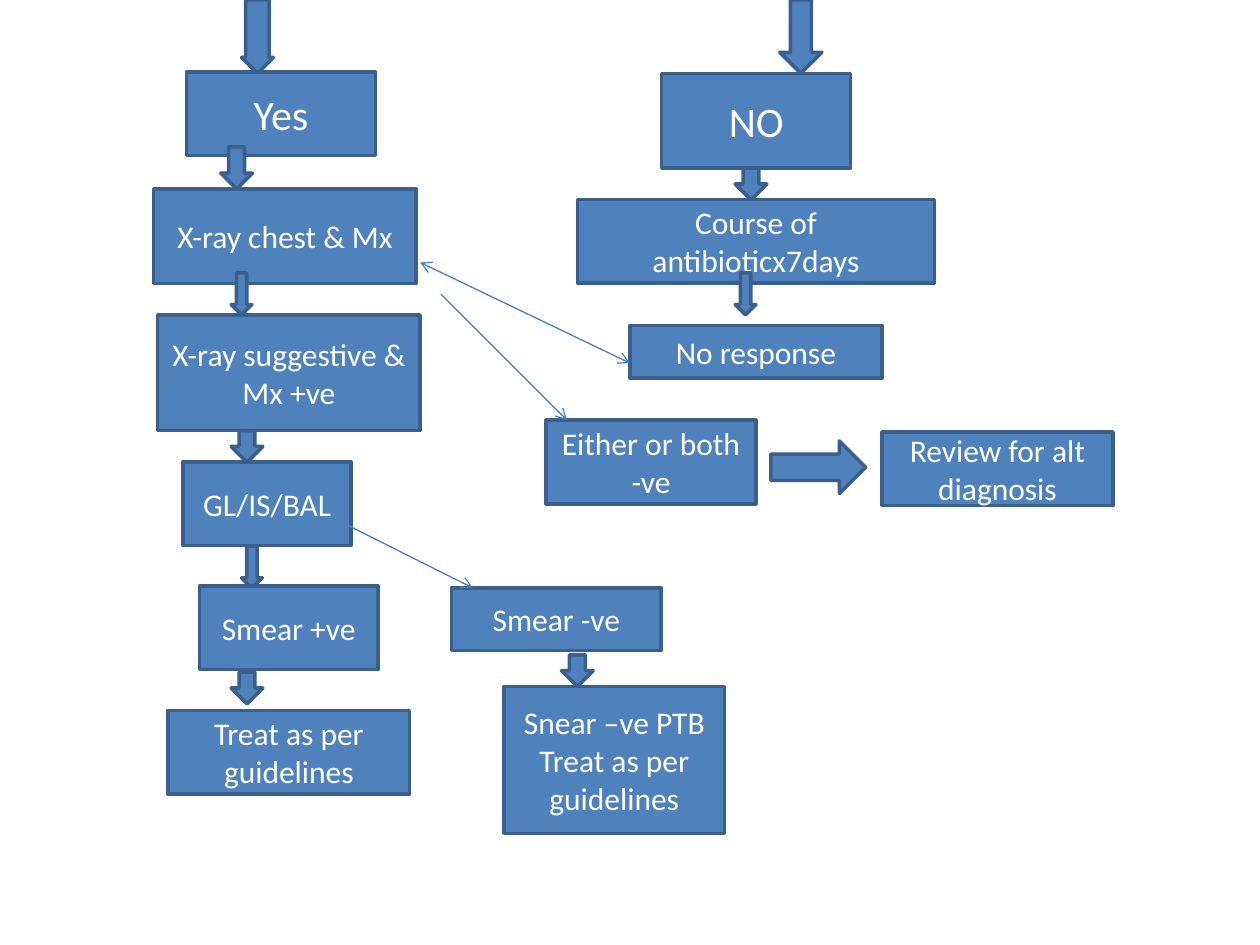
"""Build the chest X-ray and smear decision flowchart slide."""
from lxml.etree import SubElement
from pptx import Presentation
from pptx.dml.color import RGBColor
from pptx.enum.shapes import MSO_CONNECTOR as Link, MSO_SHAPE as Shape
from pptx.enum.text import MSO_ANCHOR as Anchor, PP_ALIGN as Align
from pptx.oxml.ns import qn
from pptx.util import Cm, Pt

BLUE = RGBColor(0x4F, 0x81, 0xBD)
EDGE = RGBColor(0x3A, 0x5F, 0x8C)
WIRE = RGBColor(0x4B, 0x7E, 0xBC)
WHITE = RGBColor(0xFF, 0xFF, 0xFF)

BOX, DOWN, RIGHT = Shape.RECTANGLE, Shape.DOWN_ARROW, Shape.RIGHT_ARROW

STEPS = [
    (DOWN, 15.72, 0, 0.85, 1.48, "", 0.5),
    (DOWN, 4.87, 0, 0.64, 1.48, "", 0.74),
    (BOX, 13.34, 1.48, 3.81, 1.91, "NO", 24),
    (BOX, 3.76, 1.45, 3.81, 1.69, "Yes", 24),
    (DOWN, 14.82, 3.39, 0.64, 0.64, "", 0.5),
    (DOWN, 4.45, 2.96, 0.64, 0.85, "", 0.5),
    (BOX, 11.64, 4.02, 7.2, 1.69, "Course of antibioticx7days", 18),
    (BOX, 3.1, 3.81, 5.29, 1.91, "X-ray chest & Mx", 18),
    (DOWN, 14.82, 5.5, 0.42, 0.85, "", 0.5),
    (DOWN, 4.66, 5.5, 0.42, 0.85, "", 0.5),
    (BOX, 12.7, 6.56, 5.08, 1.06, "No response", 18),
    (BOX, 3.18, 6.35, 5.29, 2.33, "X-ray suggestive & Mx +ve", 18),
    (DOWN, 4.87, 11.01, 0.42, 0.85, "", 0.5),
    (DOWN, 4.66, 8.68, 0.64, 0.64, "", 0.5),
    (BOX, 3.69, 9.31, 3.39, 1.69, "GL/IS/BAL", 18),
    (BOX, 11.01, 8.47, 4.23, 1.69, "Either or both -ve", 18),
    (RIGHT, 15.54, 8.89, 1.91, 1.06, "", 0.5),
    (BOX, 17.78, 8.71, 4.66, 1.48, "Review for alt diagnosis", 18),
    (BOX, 4.02, 11.81, 3.6, 1.69, "Smear +ve", 18),
    (DOWN, 4.66, 13.55, 0.64, 0.64, "", 0.5),
    (BOX, 3.39, 14.32, 4.87, 1.69, "Treat as per guidelines", 18),
    (BOX, 9.1, 11.85, 4.23, 1.27, "Smear -ve", 18),
    (DOWN, 11.32, 13.2, 0.64, 0.64, "", 0.5),
    (BOX, 10.16, 13.84, 4.45, 2.96, "Snear –ve PTB\nTreat as per guidelines", 18),
]

LINKS = [
    (8.47, 5.29, 12.7, 7.32, ("headEnd", "tailEnd")),
    (8.89, 5.93, 11.43, 8.47, ("tailEnd",)),
    (6.99, 10.58, 9.53, 11.85, ("tailEnd",)),
]

deck = Presentation()
deck.slide_width, deck.slide_height = Cm(25.4), Cm(19.05)
slide = deck.slides.add_slide(deck.slide_layouts[6])

for kind, left, top, width, height, text, value in STEPS:
    step = slide.shapes.add_shape(kind, Cm(left), Cm(top), Cm(width), Cm(height))
    step.shadow.inherit = False
    step.fill.solid()
    step.fill.fore_color.rgb = BLUE
    step.line.color.rgb = EDGE
    step.line.width = Pt(2)
    if kind != BOX:
        step.adjustments[0] = value
        continue
    frame = step.text_frame
    frame.word_wrap = True
    frame.vertical_anchor = Anchor.MIDDLE
    for row, words in enumerate(text.split("\n")):
        para = frame.add_paragraph() if row else frame.paragraphs[0]
        para.alignment = Align.CENTER
        run = para.add_run()
        run.text = words
        run.font.name = "Calibri"
        run.font.size = Pt(value)
        run.font.color.rgb = WHITE

for *ends, tips in LINKS:
    link = slide.shapes.add_connector(Link.STRAIGHT, *map(Cm, ends))
    link.line.color.rgb = WIRE
    link.line.width = Pt(0.75)
    for tip in tips:
        SubElement(link.line._get_or_add_ln(), qn(f"a:{tip}"), type="arrow")
    SubElement(link._element.spPr, qn("a:effectLst"))

deck.save("out.pptx")
